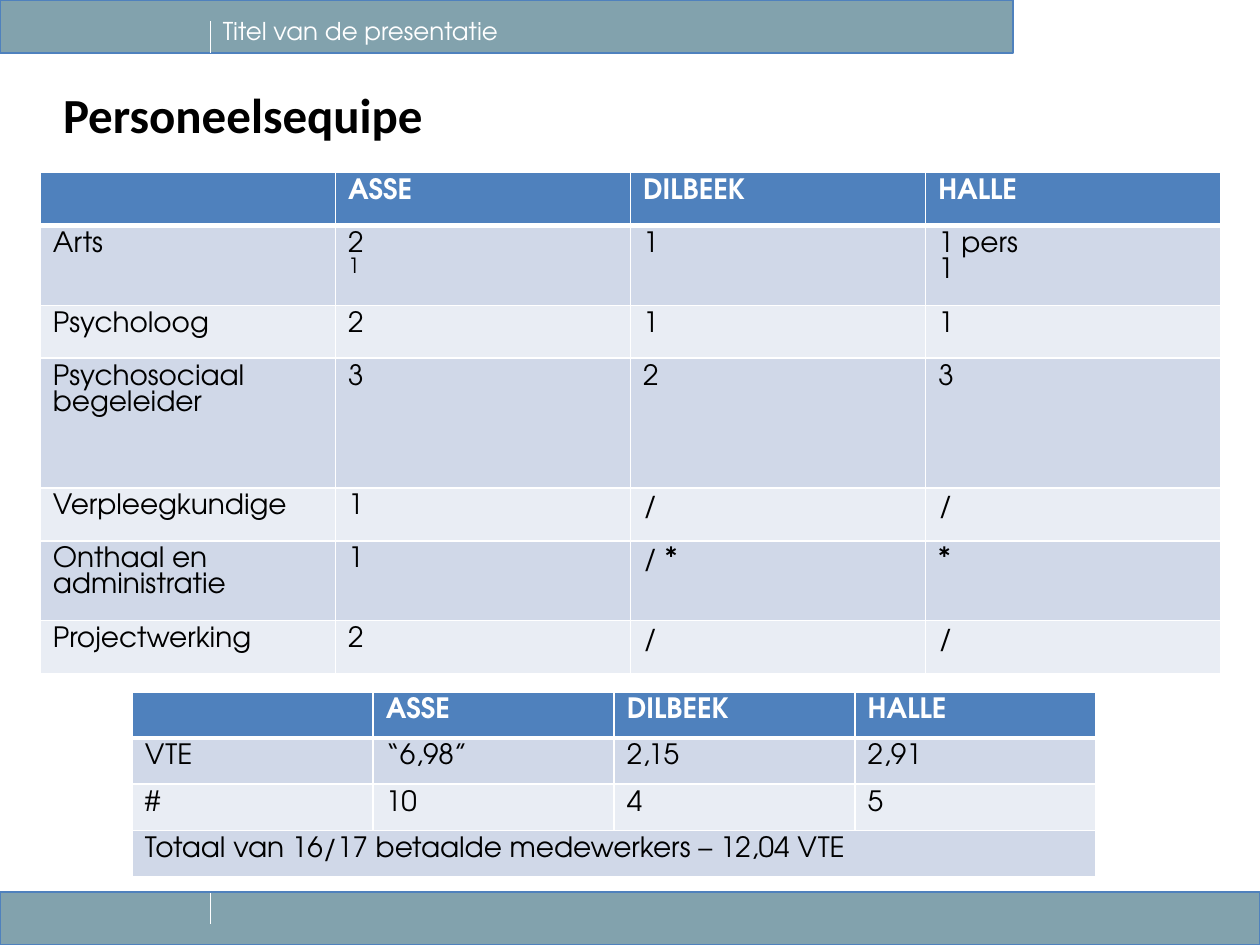
from lxml.etree import SubElement
from pptx import Presentation
from pptx.dml.color import RGBColor
from pptx.enum.shapes import MSO_CONNECTOR, MSO_SHAPE
from pptx.enum.text import MSO_ANCHOR
from pptx.oxml.ns import qn
from pptx.util import Inches, Pt

COLORS = {
    "band": "82A2AD", "blue": "4F81BD", "odd": "D0D8E8",
    "even": "E9EDF4", "white": "FFFFFF", "black": "000000",
}
BODY_FONT = "TeX Gyre Adventor"
HEADER = ["", "ASSE", "DILBEEK", "HALLE"]
STAFF = [
    HEADER,
    ["Arts", "2\n1", "1", "1 pers\n1"],
    ["Psycholoog", "2", "1", "1"],
    ["Psychosociaal begeleider", "3", "2", "3"],
    ["Verpleegkundige", "1", "/", "/"],
    ["Onthaal en administratie", "1", "/ *", "*"],
    ["Projectwerking", "2", "/", "/"],
]
STAFF_HEIGHTS = [0.42, 0.5, 0.42, 1.03, 0.42, 0.5, 0.42]
TOTALS = [
    HEADER,
    ["VTE", "“6,98”", "2,15", "2,91"],
    ["#", "10", "4", "5"],
    ["Totaal van 16/17 betaalde medewerkers – 12,04 VTE", "", "", ""],
]
TOTALS_HEIGHTS = [0.24] * 4
# left, top, width, height
BANDS = [(0, 7.08, 10, 0.42), (0, 0, 8.04, 0.42)]
# x1, y1, x2, y2, colour, points
RULES = [
    (1.67, 0.42, 1.67, 0.17, "white", 0.75),
    (1.67, 7.33, 1.67, 7.08, "white", 0.75),
    (0, 7.08, 10, 7.08, "blue", 0.5),
]


def rgb(name):
    return RGBColor.from_string(COLORS[name])


def set_font(font, size, color, name=BODY_FONT, bold=False):
    font.size, font.name, font.bold = Pt(size), name, bold
    font.color.rgb = rgb(color)


def add_band(slide, area):
    band = slide.shapes.add_shape(MSO_SHAPE.RECTANGLE, *map(Inches, area))
    band.shadow.inherit = False
    band.fill.solid()
    band.fill.fore_color.rgb = rgb("band")
    band.line.color.rgb = rgb("blue")
    band.line.width = Pt(0.75)


def add_rule(slide, x1, y1, x2, y2, color, points):
    rule = slide.shapes.add_connector(
        MSO_CONNECTOR.STRAIGHT, *map(Inches, (x1, y1, x2, y2)))
    rule.line.color.rgb = rgb(color)
    rule.line.width = Pt(points)
    SubElement(rule._element.spPr, qn("a:effectLst"))


def add_text(slide, area, text, wrap=True):
    box = slide.shapes.add_textbox(*map(Inches, area))
    box.text_frame.word_wrap = wrap
    para = box.text_frame.paragraphs[0]
    para.text = text
    return box.text_frame, para.font


def set_borders(cell, bottom):
    properties = cell._tc.get_or_add_tcPr()
    for side, points in (("L", 1), ("R", 1), ("T", 1), ("B", bottom)):
        line = SubElement(properties, qn(f"a:ln{side}"), w=str(Pt(points)))
        fill = SubElement(line, qn("a:solidFill"))
        SubElement(fill, qn("a:srgbClr"), val=COLORS["white"])


def fill_cell(cell, text, row):
    is_header = row == 0
    set_borders(cell, 3 if is_header else 1)
    cell.fill.solid()
    cell.fill.fore_color.rgb = rgb(
        "blue" if is_header else "odd" if row % 2 else "even")
    cell.text = text
    for index, para in enumerate(cell.text_frame.paragraphs):
        is_small = text == "2\n1" and index == 1
        set_font(para.font, 12 if is_small else 16,
                 "white" if is_header else "black", bold=is_header)
        if not text:
            # An empty cell takes its line height from the end mark
            end = SubElement(para._p, qn("a:endParaRPr"), sz="1600")
            SubElement(end, qn("a:latin"), typeface=BODY_FONT)


def add_grid(slide, left, top, width, rows, heights):
    frame = slide.shapes.add_table(
        len(rows), len(HEADER), Inches(left), Inches(top),
        Inches(width), Inches(sum(heights)))
    table = frame.table
    for column in table.columns:
        column.width = Inches(width / len(HEADER))
    for row, (texts, height) in enumerate(zip(rows, heights)):
        table.rows[row].height = Inches(height)
        for column, text in enumerate(texts):
            fill_cell(table.cell(row, column), text, row)
    return table


def main():
    deck = Presentation()
    deck.slide_width, deck.slide_height = Inches(10), Inches(7.5)
    slide = deck.slides.add_slide(deck.slide_layouts[6])

    for area in BANDS:
        add_band(slide, area)
    _, font = add_text(slide, (1.67, 0.08, 2.43, 0.34),
                       "Titel van de presentatie", wrap=False)
    set_font(font, 14, "white")
    for rule in RULES:
        add_rule(slide, *rule)

    frame, font = add_text(slide, (0.5, 0.64, 7.19, 0.55), "Personeelsequipe")
    frame.margin_left = frame.margin_right = 0
    frame.vertical_anchor = MSO_ANCHOR.BOTTOM
    set_font(font, 28, "black", "Calibri", bold=True)

    add_grid(slide, 0.32, 1.37, 9.37, STAFF, STAFF_HEIGHTS)
    totals = add_grid(slide, 1.05, 5.49, 7.65, TOTALS, TOTALS_HEIGHTS)
    totals.cell(3, 0).merge(totals.cell(3, 3))

    deck.save("out.pptx")


if __name__ == "__main__":
    main()
